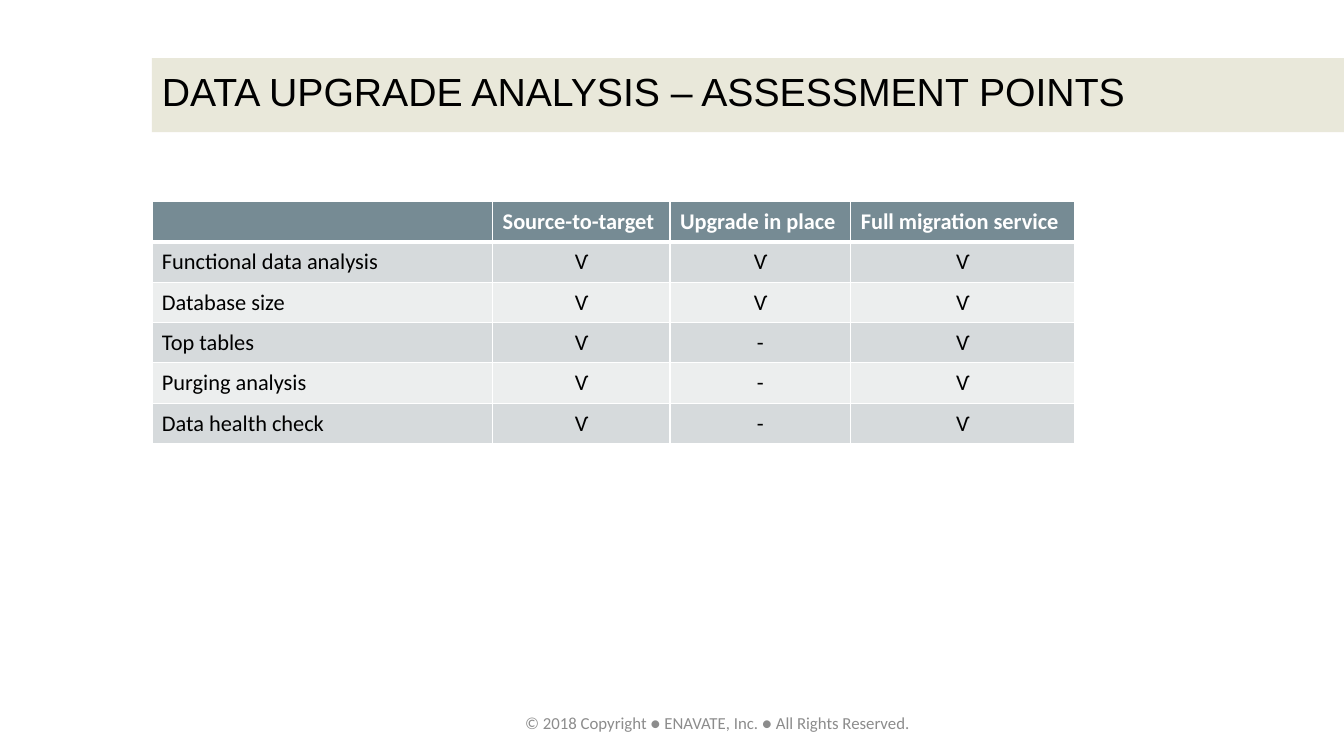
from lxml import etree
from pptx import Presentation
from pptx.dml.color import RGBColor
from pptx.enum.shapes import MSO_SHAPE
from pptx.enum.text import MSO_ANCHOR, PP_ALIGN
from pptx.oxml.ns import qn
from pptx.util import Pt

BLACK = RGBColor(0x00, 0x00, 0x00)
WHITE = RGBColor(0xFF, 0xFF, 0xFF)
GREY = RGBColor(0x8C, 0x8C, 0x8C)
SAND = RGBColor(0xE1, 0xDF, 0xCB)
SLATE = RGBColor(0x76, 0x8B, 0x94)
STRIPES = [RGBColor(0xD6, 0xDA, 0xDC), RGBColor(0xEC, 0xEE, 0xEE)]

TITLE_FORMAT = {"name": "Arial", "size": Pt(28), "bold": False}
FOOTER_FORMAT = {"name": "Calibri", "size": Pt(12), "bold": False}
HEADER_FORMAT = {"name": "Calibri", "size": Pt(16), "bold": True}
BODY_FORMAT = {"name": "Calibri", "size": Pt(16), "bold": False}

LEFT = Pt(108.5)
BAND_WIDTH = Pt(851.5)
ROW_HEIGHT = Pt(28.8)
COLUMN_WIDTHS = [Pt(243.4), Pt(126.7), Pt(129.1), Pt(159.8)]
ASSESSMENT = [
    ["", "Source-to-target", "Upgrade in place", "Full migration service"],
    ["Functional data analysis", "Ѵ", "Ѵ", "Ѵ"],
    ["Database size", "Ѵ", "Ѵ", "Ѵ"],
    ["Top tables", "Ѵ", "-", "Ѵ"],
    ["Purging analysis", "Ѵ", "-", "Ѵ"],
    ["Data health check", "Ѵ", "-", "Ѵ"],
]


def write(paragraph, text, text_format, color):
    run = paragraph.add_run()
    run.text = text
    for attribute, value in text_format.items():
        setattr(run.font, attribute, value)
    run.font.color.rgb = color


def add_border(cell, side, width):
    line = etree.SubElement(cell._tc.get_or_add_tcPr(), qn(f"a:ln{side}"), w=str(Pt(width)))
    fill = etree.SubElement(line, qn("a:solidFill"))
    etree.SubElement(fill, qn("a:srgbClr"), val=str(WHITE))


presentation = Presentation()
presentation.slide_width = Pt(960)
presentation.slide_height = Pt(540)
slide = presentation.slides.add_slide(presentation.slide_layouts[6])

# Title band, 70% opaque
band = slide.shapes.add_shape(MSO_SHAPE.RECTANGLE, LEFT, Pt(41.5), BAND_WIDTH, Pt(53))
band.shadow.inherit = False
band.fill.solid()
band.fill.fore_color.rgb = SAND
band.line.fill.background()
band_color = band.fill._xPr.find(".//" + qn("a:srgbClr"))
etree.SubElement(band_color, qn("a:alpha"), val="70000")

# Copyright line
footer = slide.shapes.add_textbox(Pt(368), Pt(505.5), Pt(292), Pt(21.6)).text_frame
footer.word_wrap = False
write(footer.paragraphs[0], "© 2018 Copyright ● ENAVATE, Inc. ● All Rights Reserved.",
      FOOTER_FORMAT, GREY)

# Title
title = slide.shapes.add_textbox(LEFT, Pt(40.3), BAND_WIDTH, Pt(54)).text_frame
title.word_wrap = True
title.vertical_anchor = MSO_ANCHOR.MIDDLE
title.paragraphs[0].line_spacing = 0.9
write(title.paragraphs[0], "DATA UPGRADE ANALYSIS – ASSESSMENT POINTS", TITLE_FORMAT, BLACK)

# Assessment table
assessment = slide.shapes.add_table(
    len(ASSESSMENT), len(COLUMN_WIDTHS), LEFT, Pt(144),
    sum(COLUMN_WIDTHS), ROW_HEIGHT * len(ASSESSMENT)).table
for column, width in zip(assessment.columns, COLUMN_WIDTHS):
    column.width = width

for row_index, row in enumerate(ASSESSMENT):
    assessment.rows[row_index].height = ROW_HEIGHT
    is_header = row_index == 0
    for column_index, text in enumerate(row):
        cell = assessment.cell(row_index, column_index)
        cell.vertical_anchor = MSO_ANCHOR.MIDDLE
        for side in "LRTB":
            under_header = (row_index, side) in [(0, "B"), (1, "T")]
            add_border(cell, side, 3 if under_header else 1)
        cell.fill.solid()
        cell.fill.fore_color.rgb = SLATE if is_header else STRIPES[(row_index - 1) % 2]
        paragraph = cell.text_frame.paragraphs[0]
        if not is_header and column_index > 0:
            paragraph.alignment = PP_ALIGN.CENTER
        if text:
            write(paragraph, text, HEADER_FORMAT if is_header else BODY_FORMAT,
                  WHITE if is_header else BLACK)
        else:
            etree.SubElement(paragraph._p, qn("a:endParaRPr"), sz="1600")

presentation.save("out.pptx")
